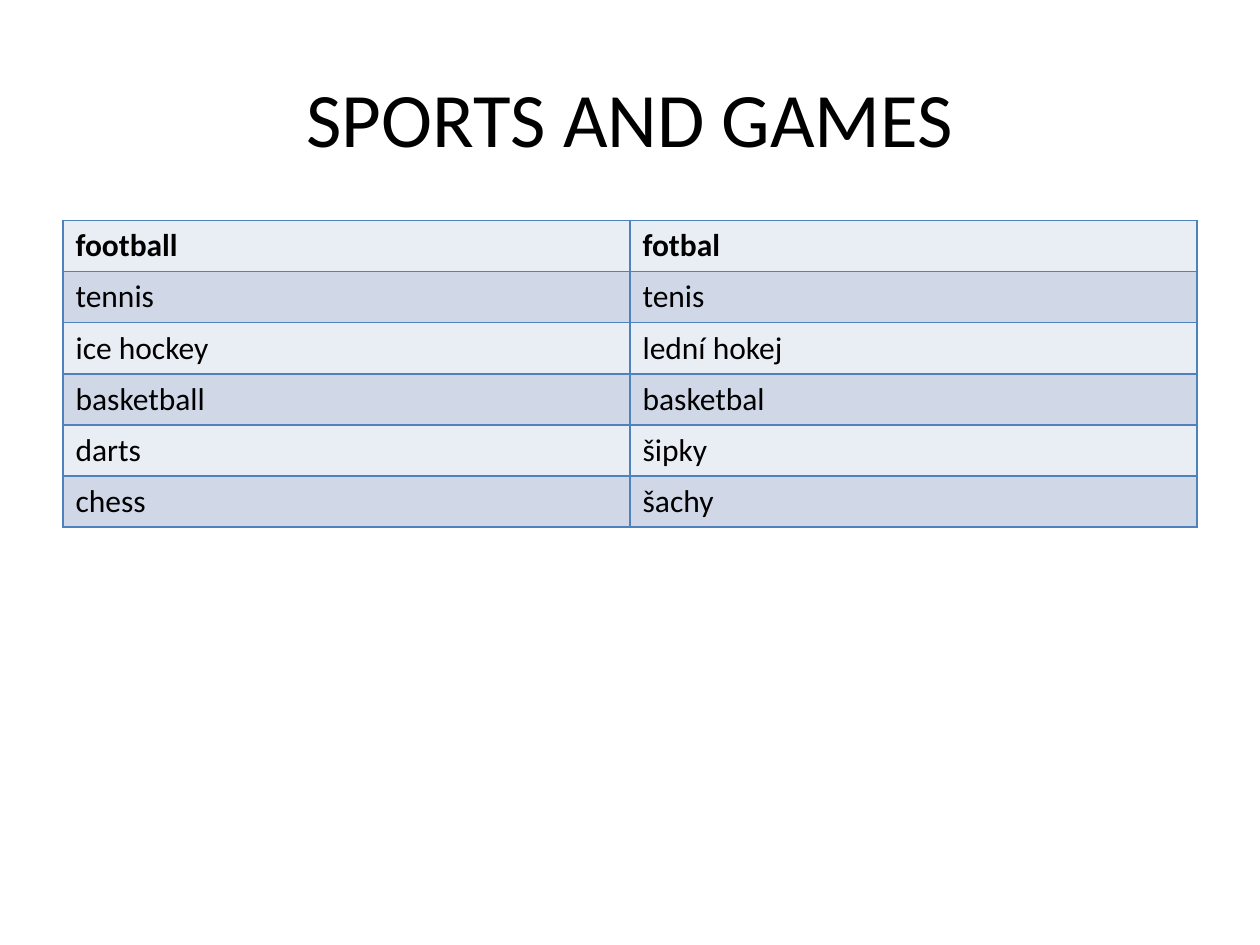
from lxml import etree
from pptx import Presentation, util as u
from pptx.dml.color import RGBColor
from pptx.enum import text
from pptx.oxml import ns

COLOURS = {"ink": "000000", "line": "4F81BD", "light": "E9EDF4", "dark": "D0D8E8"}
WIDTH, HEIGHT = u.Inches(10), u.Inches(7.5)
WORDS = [
    ("football", "fotbal"),
    ("tennis", "tenis"),
    ("ice hockey", "lední hokej"),
    ("basketball", "basketbal"),
    ("darts", "šipky"),
    ("chess", "šachy"),
]


def share(left, top, width, height):
    """Turn shares of the slide's size into a box of lengths."""
    return [int(part * whole) for part, whole in
            zip((left, top, width, height), (WIDTH, HEIGHT) * 2)]


def format_font(font, size, bold=False):
    values = {"name": "Calibri", "size": u.Pt(size), "bold": bold}
    for name, value in values.items():
        setattr(font, name, value)
    font.color.rgb = RGBColor.from_string(COLOURS["ink"])


def add_borders(cell):
    properties = cell._tc.get_or_add_tcPr()
    for side in ("lnL", "lnR", "lnT", "lnB"):
        line = etree.SubElement(properties, ns.qn(f"a:{side}"), w=str(u.Pt(1)))
        fill = etree.SubElement(line, ns.qn("a:solidFill"))
        etree.SubElement(fill, ns.qn("a:srgbClr"), val=COLOURS["line"])


def place_title(page, box, wording):
    title = page.shapes.title
    for name, value in zip(("left", "top", "width", "height"), box):
        setattr(title, name, value)
    title.text_frame.vertical_anchor = text.MSO_ANCHOR.MIDDLE
    para = title.text_frame.paragraphs[0]
    para.alignment = text.PP_ALIGN.CENTER
    span = para.add_run()
    span.text = wording
    format_font(span.font, 44)


def place_vocabulary(page, box, words):
    table = page.shapes.add_table(len(words), len(words[0]), *box).table
    for row, pair in enumerate(words):
        for column, word in enumerate(pair):
            cell = table.cell(row, column)
            add_borders(cell)
            cell.fill.solid()
            band = "dark" if row % 2 else "light"
            cell.fill.fore_color.rgb = RGBColor.from_string(COLOURS[band])
            span = cell.text_frame.paragraphs[0].add_run()
            span.text = word
            format_font(span.font, 18, bold=row == 0)


def main():
    deck = Presentation()
    deck.slide_width, deck.slide_height = WIDTH, HEIGHT
    page = deck.slides.add_slide(deck.slide_layouts[5])
    # Heading
    place_title(page, share(0.05, 0.04, 0.9, 1 / 6), "SPORTS AND GAMES")
    # English and Czech words
    place_vocabulary(page, share(0.05, 7 / 30, 0.9, 0.324), WORDS)
    deck.save("out.pptx")


if __name__ == "__main__":
    main()
